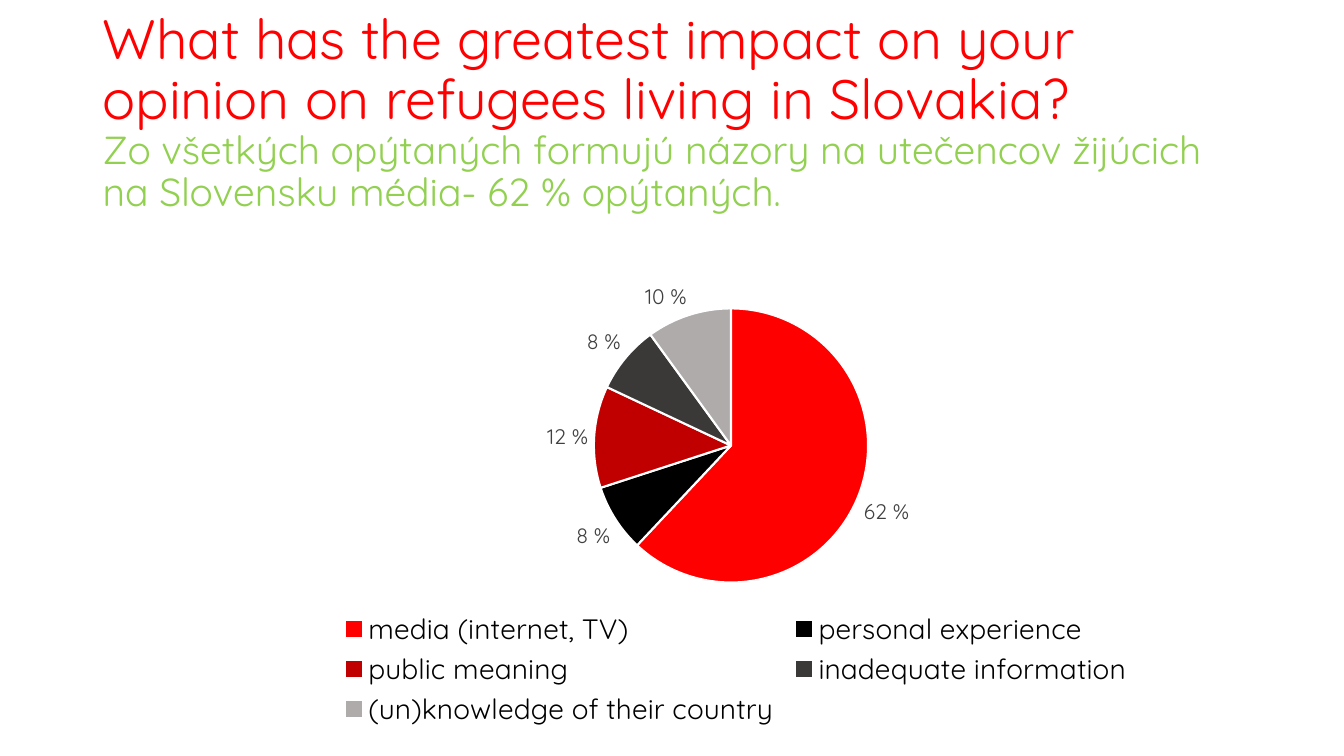
from pptx import Presentation
from pptx.chart.data import CategoryChartData
from pptx.dml.color import RGBColor
from pptx.enum.chart import XL_CHART_TYPE, XL_LABEL_POSITION, XL_LEGEND_POSITION
from pptx.enum.text import MSO_ANCHOR
from pptx.oxml import parse_xml
from pptx.oxml.ns import nsdecls, qn
from pptx.util import Inches, Pt

FONT = "Quicksand"
CHART_AREA = (1.38, 2.63, 11.74, 4.65)
PIE_AREA = (5.89, 3.06, 2.72, 2.72)
LEGEND_AREA = (3.3, 6.02, 8.0, 1.24)
ANSWERS = [
    ("media (internet, TV)", 62, "FF0000"),
    ("personal experience", 8, "000000"),
    ("public meaning", 12, "C00000"),
    ("inadequate information", 8, "3B3838"),
    ("(un)knowledge of their country", 10, "AFABAB"),
]


def color(value):
    """Turn a hex string into a colour."""
    return RGBColor.from_string(value)


def format_font(font, size, fill, name=FONT):
    """Set the typeface, size and colour of a font."""
    font.name = name
    font.size = Pt(size)
    font.color.rgb = color(fill)


def add_text(para, text, **style):
    """Add a formatted span to a paragraph."""
    span = para.add_run()
    span.text = text
    format_font(span.font, **style)


def add_title(page):
    """Add the question with its answer below."""
    box = page.shapes.add_textbox(Inches(0.92), Inches(0.4), Inches(11.5), Inches(1.45))
    frame = box.text_frame
    frame.word_wrap = True
    frame.vertical_anchor = MSO_ANCHOR.MIDDLE
    para = frame.paragraphs[0]
    para.line_spacing = 0.9
    add_text(para, "What has the greatest impact on your opinion on refugees living in Slovakia?",
             size=39.6, fill="FF0000")
    para.add_line_break()
    add_text(para, "Zo všetkých opýtaných formujú názory na utečencov žijúcich "
             "na Slovensku média- 62 % opýtaných.", size=27.9, fill="92D050")


def place_in_chart(element, position, area, target=""):
    """Fix the place of a chart part, given in slide inches."""
    left, top, width, height = CHART_AREA
    shares = {"x": (area[0] - left) / width, "y": (area[1] - top) / height,
              "w": area[2] / width, "h": area[3] / height}
    values = "".join(f'<c:{key} val="{share:.4f}"/>' for key, share in shares.items())
    old = element.find(qn("c:layout"))
    if old is not None:
        element.remove(old)
    element.insert(position, parse_xml(
        f'<c:layout {nsdecls("c")}><c:manualLayout>{target}'
        f'<c:xMode val="edge"/><c:yMode val="edge"/>{values}</c:manualLayout></c:layout>'))


def add_pie(page):
    """Add the pie of answers with labels and legend."""
    data = CategoryChartData(number_format='0" %"')
    data.categories = [name for name, share, fill in ANSWERS]
    data.add_series("Series 1", [share for name, share, fill in ANSWERS])
    area = [Inches(length) for length in CHART_AREA]
    chart = page.shapes.add_chart(XL_CHART_TYPE.PIE, *area, data).chart
    chart.has_title = False
    format_font(chart.font, 10, "000000", "Calibri")

    plot = chart.plots[0]
    plot.vary_by_categories = True
    for index, (name, share, fill) in enumerate(ANSWERS):
        slice_format = plot.series[0].points[index].format
        slice_format.fill.solid()
        slice_format.fill.fore_color.rgb = color(fill)
        slice_format.line.color.rgb = color("FFFFFF")
        slice_format.line.width = Pt(1.5)

    plot.has_data_labels = True
    labels = plot.data_labels
    labels.show_value = True
    labels.show_percentage = False
    labels.number_format = '0" %"'
    labels.number_format_is_linked = False
    labels.position = XL_LABEL_POSITION.OUTSIDE_END
    format_font(labels.font, 15, "404040")

    chart.has_legend = True
    legend = chart.legend
    legend.position = XL_LEGEND_POSITION.BOTTOM
    legend.include_in_layout = False
    format_font(legend.font, 20, "000000")
    plot_area = chart.element.find(qn("c:chart")).find(qn("c:plotArea"))
    place_in_chart(plot_area, 0, PIE_AREA, '<c:layoutTarget val="inner"/>')
    place_in_chart(chart.element.find(qn("c:chart")).find(qn("c:legend")), 1, LEGEND_AREA)


def main():
    """Build and save the deck."""
    deck = Presentation()
    deck.slide_width = Inches(13.33)
    deck.slide_height = Inches(7.5)
    page = deck.slides.add_slide(deck.slide_layouts[6])
    add_title(page)
    add_pie(page)
    deck.save("out.pptx")


if __name__ == "__main__":
    main()
